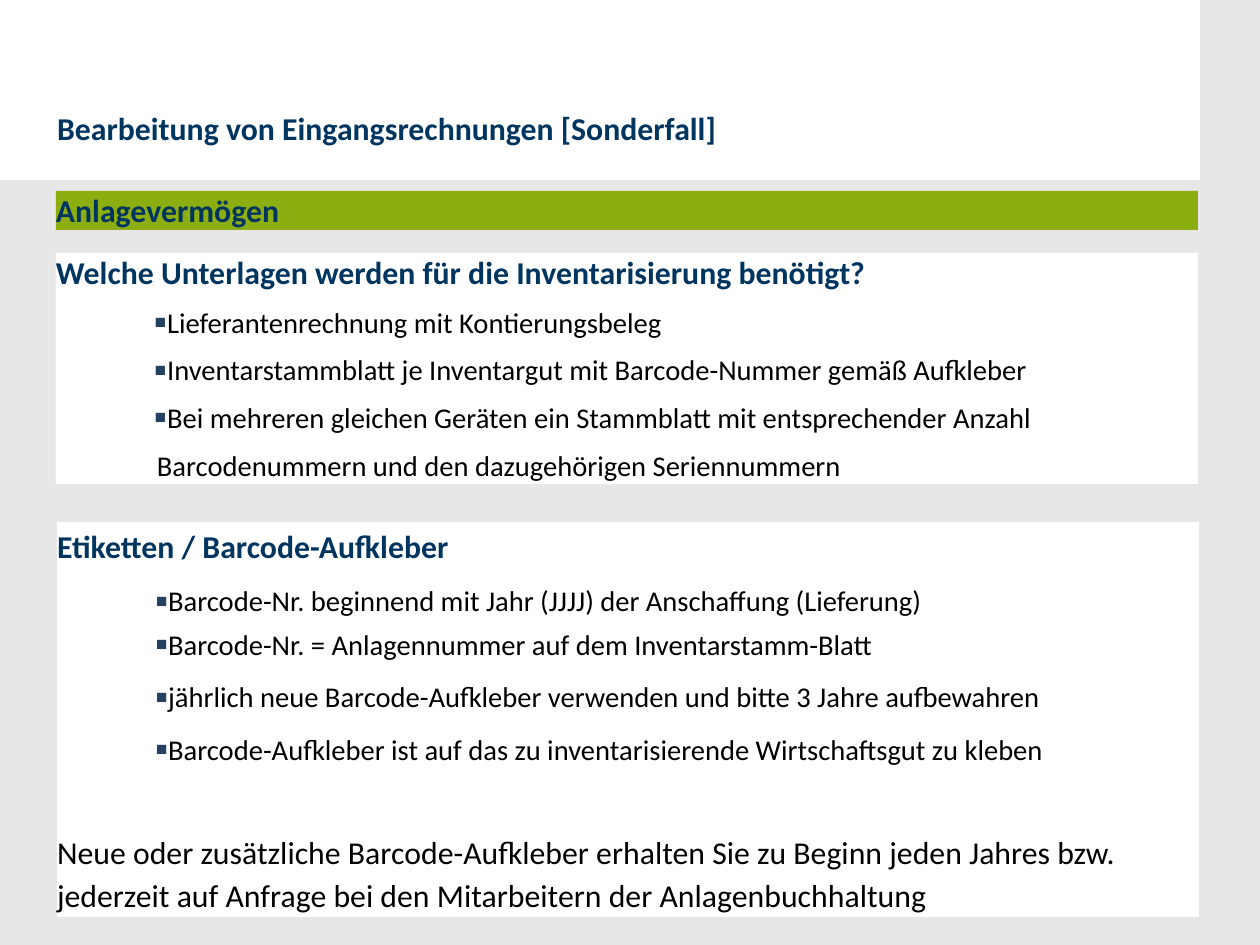
"""Build the slide on inventory documents and barcode labels."""
from dataclasses import dataclass

from lxml import etree
from pptx import Presentation
from pptx.dml.color import RGBColor
from pptx.enum.shapes import MSO_SHAPE
from pptx.enum.text import MSO_ANCHOR, MSO_AUTO_SIZE, PP_ALIGN
from pptx.oxml.ns import qn
from pptx.util import Emu, Pt

RECTANGLE = MSO_SHAPE.RECTANGLE
TOP = MSO_ANCHOR.TOP
NO_AUTOFIT = MSO_AUTO_SIZE.NONE
LEFT = PP_ALIGN.LEFT
TWO_CONTENT_LAYOUT = 3


@dataclass(frozen=True)
class Theme:
    font: str = "Calibri"
    background: str = "E7E7E7"
    panel: str = "FFFFFF"
    bar: str = "8DAE10"
    heading: str = "003560"
    body: str = "000000"
    bullet: str = "254061"
    large: int = 20
    normal: int = 18
    bullet_percent: int = 130
    gap: int = 6


@dataclass(frozen=True)
class Box:
    left: int
    top: int
    width: int
    height: int


@dataclass(frozen=True)
class Line:
    text: str
    size: int
    color: str
    bold: bool = False
    margin: int = 0
    indent: int = 0
    bullet: bool = False
    spacing: int | None = None
    before: int = 0


@dataclass(frozen=True)
class Panel:
    box: Box
    lines: list[Line]


THEME = Theme()


def px(length: int) -> Emu:
    """Turn pixels into EMU."""
    return Emu(length * 8000)


def heading(text: str, spacing: int | None = None) -> Line:
    """Describe a bold heading line."""
    return Line(text, THEME.large, THEME.heading, bold=True, spacing=spacing)


def item(text: str, spacing: int | None) -> Line:
    """Describe a bulleted line."""
    return Line(text, THEME.normal, THEME.body, margin=63, indent=35,
                bullet=True, spacing=spacing)


def place(shape, box: Box) -> None:
    """Move and size a shape."""
    shape.left, shape.top = px(box.left), px(box.top)
    shape.width, shape.height = px(box.width), px(box.height)


def paint(shape, color: str) -> None:
    """Give a shape a solid fill and no outline."""
    shape.fill.solid()
    shape.fill.fore_color.rgb = RGBColor.from_string(color)
    shape.line.fill.background()


def add_block(slide, box: Box, color: str):
    """Add a plain filled rectangle."""
    block = slide.shapes.add_shape(
        RECTANGLE, px(box.left), px(box.top), px(box.width), px(box.height))
    block.shadow.inherit = False
    paint(block, color)
    return block


def set_bullet(paragraph, line: Line) -> None:
    """Set the indents and the bullet of a paragraph."""
    properties = paragraph._p.get_or_add_pPr()
    properties.set("marL", str(px(line.margin)))
    properties.set("indent", str(px(line.indent)))
    if not line.bullet:
        etree.SubElement(properties, qn("a:buNone"))
        return
    tint = etree.SubElement(properties, qn("a:buClr"))
    etree.SubElement(tint, qn("a:srgbClr"), val=THEME.bullet)
    etree.SubElement(properties, qn("a:buSzPct"),
                     val=str(THEME.bullet_percent * 1000))
    etree.SubElement(properties, qn("a:buChar"), char="▪")


def write(shape, lines: list[Line]) -> None:
    """Fill a shape with formatted lines."""
    frame = shape.text_frame
    frame.auto_size = NO_AUTOFIT
    frame.word_wrap = True
    frame.vertical_anchor = TOP
    frame.margin_left = frame.margin_top = 0
    frame.margin_right = frame.margin_bottom = 0
    for index, line in enumerate(lines):
        paragraph = frame.add_paragraph() if index else frame.paragraphs[0]
        paragraph.text = line.text
        set_bullet(paragraph, line)
        paragraph.alignment = LEFT
        paragraph.space_before = Pt(line.before)
        paragraph.space_after = Pt(THEME.gap)
        paragraph.line_spacing = Pt(line.spacing) if line.spacing else 1.0
        font = paragraph.font
        font.name, font.size, font.bold = THEME.font, Pt(line.size), line.bold
        font.color.rgb = RGBColor.from_string(line.color)


DOCUMENTS = Panel(Box(56, 253, 1142, 231), [
    heading("Welche Unterlagen werden für die Inventarisierung benötigt?", 24),
    item("Lieferantenrechnung mit Kontierungsbeleg", 24),
    item("Inventarstammblatt je Inventargut mit Barcode-Nummer gemäß Aufkleber", 24),
    item("Bei mehreren gleichen Geräten ein Stammblatt mit entsprechender Anzahl", 24),
    Line("Barcodenummern und den dazugehörigen Seriennummern",
         THEME.normal, THEME.body, margin=101, spacing=24),
])
LABELS = Panel(Box(57, 522, 1142, 395), [
    heading("Etiketten / Barcode-Aufkleber", 27),
    item("Barcode-Nr. beginnend mit Jahr (JJJJ) der Anschaffung (Lieferung)", 27),
    item("Barcode-Nr. = Anlagennummer auf dem Inventarstamm-Blatt", None),
    item("jährlich neue Barcode-Aufkleber verwenden und bitte 3 Jahre aufbewahren", 27),
    item("Barcode-Aufkleber ist auf das zu inventarisierende Wirtschaftsgut zu kleben", 27),
    Line("Neue oder zusätzliche Barcode-Aufkleber erhalten Sie zu Beginn jeden Jahres "
         "bzw. jederzeit auf Anfrage bei den Mitarbeitern der Anlagenbuchhaltung",
         THEME.large, THEME.body, spacing=27, before=33),
])


def main() -> None:
    """Build and save the slide."""
    deck = Presentation()
    deck.slide_width, deck.slide_height = px(1260), px(945)
    slide = deck.slides.add_slide(deck.slide_layouts[TWO_CONTENT_LAYOUT])
    backdrop = slide.background.fill
    backdrop.solid()
    backdrop.fore_color.rgb = RGBColor.from_string(THEME.background)

    title = slide.shapes.title
    header = add_block(slide, Box(0, 0, 1200, 180), THEME.panel)
    title.element.addprevious(header.element)
    place(title, Box(57, 109, 1020, 39))
    write(title, [heading("Bearbeitung von Eingangsrechnungen [Sonderfall]")])

    topic = add_block(slide, Box(56, 191, 1142, 39), THEME.bar)
    write(topic, [heading("Anlagevermögen")])

    for key, panel in enumerate((DOCUMENTS, LABELS), start=1):
        body = slide.placeholders[key]
        place(body, panel.box)
        paint(body, THEME.panel)
        write(body, panel.lines)

    deck.save("out.pptx")


if __name__ == "__main__":
    main()
